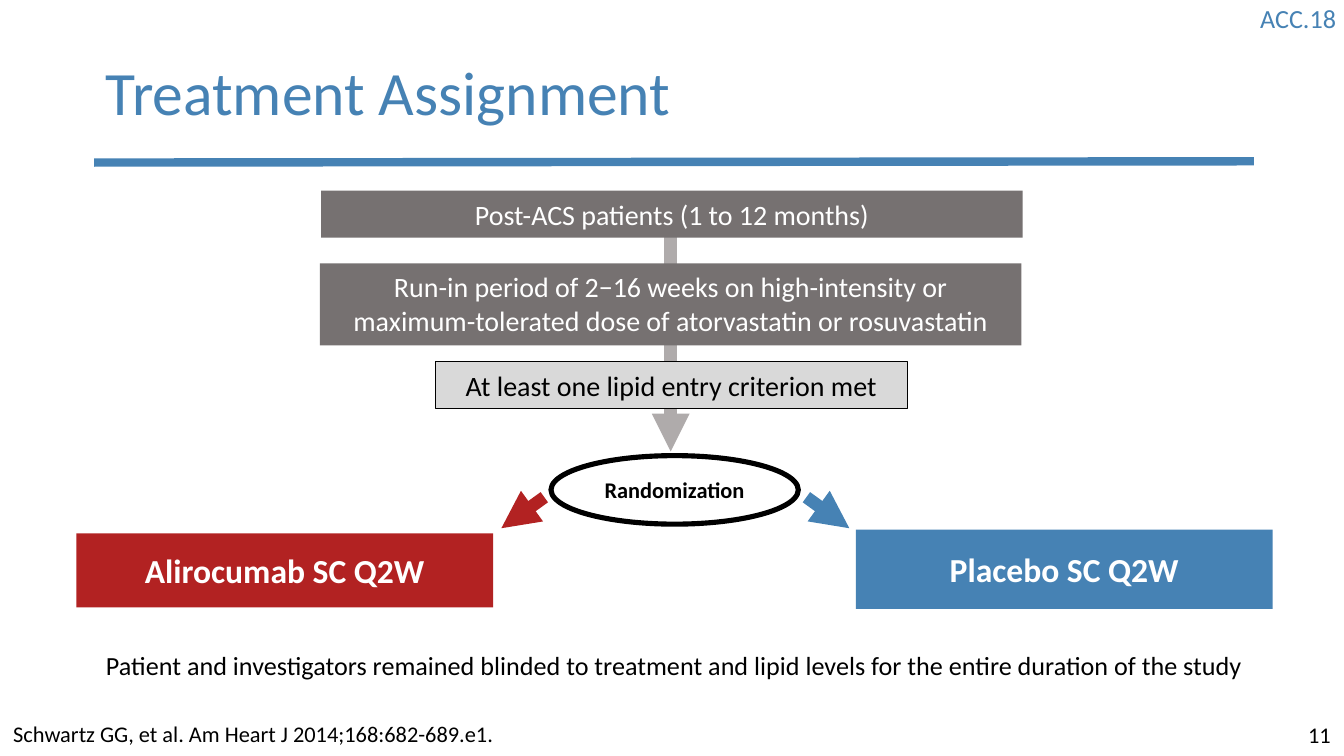
from lxml.etree import SubElement
from pptx import Presentation
from pptx.dml.color import RGBColor
from pptx.enum.shapes import MSO_CONNECTOR as CONN, MSO_SHAPE as SHAPE
from pptx.enum.text import MSO_ANCHOR as ANCHOR, PP_ALIGN as ALIGN
from pptx.oxml.ns import qn
from pptx.util import Pt

FONT = "Calibri"
BLUE, RED = "4682B4", "B22222"
BLACK, WHITE = "000000", "FFFFFF"
DARK, MID, LIGHT = "767171", "AFABAB", "D9D9D9"


def rgb(color):
    return RGBColor.from_string(color)


def write(sp, text, size, color, align, anchor, bold=False):
    tf = sp.text_frame
    tf.word_wrap = True
    tf.vertical_anchor = anchor
    p = tf.paragraphs[0]
    p.text = text
    p.alignment = align
    p.font.name = FONT
    p.font.size = Pt(size)
    p.font.bold = bold
    p.font.color.rgb = rgb(color)
    return p


def add_text(s, box, text, size, color=BLACK, align=ALIGN.LEFT, anchor=ANCHOR.TOP):
    sp = s.shapes.add_textbox(*map(Pt, box))
    return write(sp, text, size, color, align, anchor)


def add_box(s, box, text, size, color, fill=None, line=None, width=0.5,
            kind=SHAPE.RECTANGLE, anchor=ANCHOR.MIDDLE, bold=False):
    sp = s.shapes.add_shape(kind, *map(Pt, box))
    sp.shadow.inherit = False
    if fill:
        sp.fill.solid()
        sp.fill.fore_color.rgb = rgb(fill)
    else:
        sp.fill.background()
    if line:
        sp.line.color.rgb = rgb(line)
        sp.line.width = Pt(width)
    else:
        sp.line.fill.background()
    write(sp, text, size, color, ALIGN.CENTER, anchor, bold)


def add_line(s, start, end, color, width, arrow=False):
    cx = s.shapes.add_connector(CONN.STRAIGHT, *map(Pt, start + end))
    cx.line.color.rgb = rgb(color)
    cx.line.width = Pt(width)
    if arrow:
        SubElement(cx.line._get_or_add_ln(), qn("a:tailEnd"), type="triangle")
    SubElement(cx._element.spPr, qn("a:effectLst"))


def add_frame(s):
    add_line(s, (50.4, 87.1), (671.8, 86.4), BLUE, 4.5)
    add_text(s, (612, -2.2, 110.9, 24.5), "ACC.18", 14, BLUE, ALIGN.RIGHT)
    add_text(s, (609.1, 383, 110.9, 21.6), "11", 12, align=ALIGN.RIGHT)
    title = add_text(s, (49.7, 12.2, 620.6, 78.5), "Treatment Assignment", 33,
                     BLUE, anchor=ANCHOR.MIDDLE)
    title.line_spacing = 0.9


def add_flow(s):
    add_line(s, (359.3, 115.2), (359.3, 241.9), MID, 6.75, arrow=True)
    steps = [
        ((172.1, 102.2, 375.8, 25.2), "Post-ACS patients (1 to 12 months)",
         WHITE, DARK, None),
        ((171.4, 141.1, 375.8, 43.9),
         "Run-in period of 2−16 weeks on high-intensity or "
         "maximum-tolerated dose of atorvastatin or rosuvastatin",
         WHITE, DARK, None),
        ((233.3, 193.7, 252.7, 25.2), "At least one lipid entry criterion met",
         BLACK, LIGHT, BLACK),
    ]
    for box, text, color, fill, line in steps:
        add_box(s, box, text, 15, color, fill, line, anchor=ANCHOR.TOP)


def add_arms(s):
    arms = [
        ((458.6, 283.7, 223.2, 42.5), "Placebo SC Q2W", BLUE, 432, 455),
        ((41, 285.8, 223.2, 39.6), "Alirocumab SC Q2W", RED, 291.6, 268.6),
    ]
    for box, text, color, x1, x2 in arms:
        add_box(s, box, text, 18, WHITE, color, bold=True)
        add_line(s, (x1, 266.4), (x2, 283), color, 6.75, arrow=True)
    add_box(s, (295.2, 244.1, 132.5, 36.7), "Randomization", 12, BLACK,
            line=BLACK, width=2.75, kind=SHAPE.OVAL, bold=True)


def add_notes(s):
    add_text(s, (0, 382.3, 549.4, 21.6),
             "Schwartz GG, et al. Am Heart J 2014;168:682-689.e1.", 12)
    add_text(s, (41, 344.2, 640.8, 24.5),
             "Patient and investigators remained blinded to treatment and "
             "lipid levels for the entire duration of the study",
             14, align=ALIGN.CENTER)


def main():
    prs = Presentation()
    prs.slide_width, prs.slide_height = Pt(720), Pt(405)
    s = prs.slides.add_slide(prs.slide_layouts[6])
    add_frame(s)
    add_flow(s)
    add_arms(s)
    add_notes(s)
    prs.save("out.pptx")


if __name__ == "__main__":
    main()
